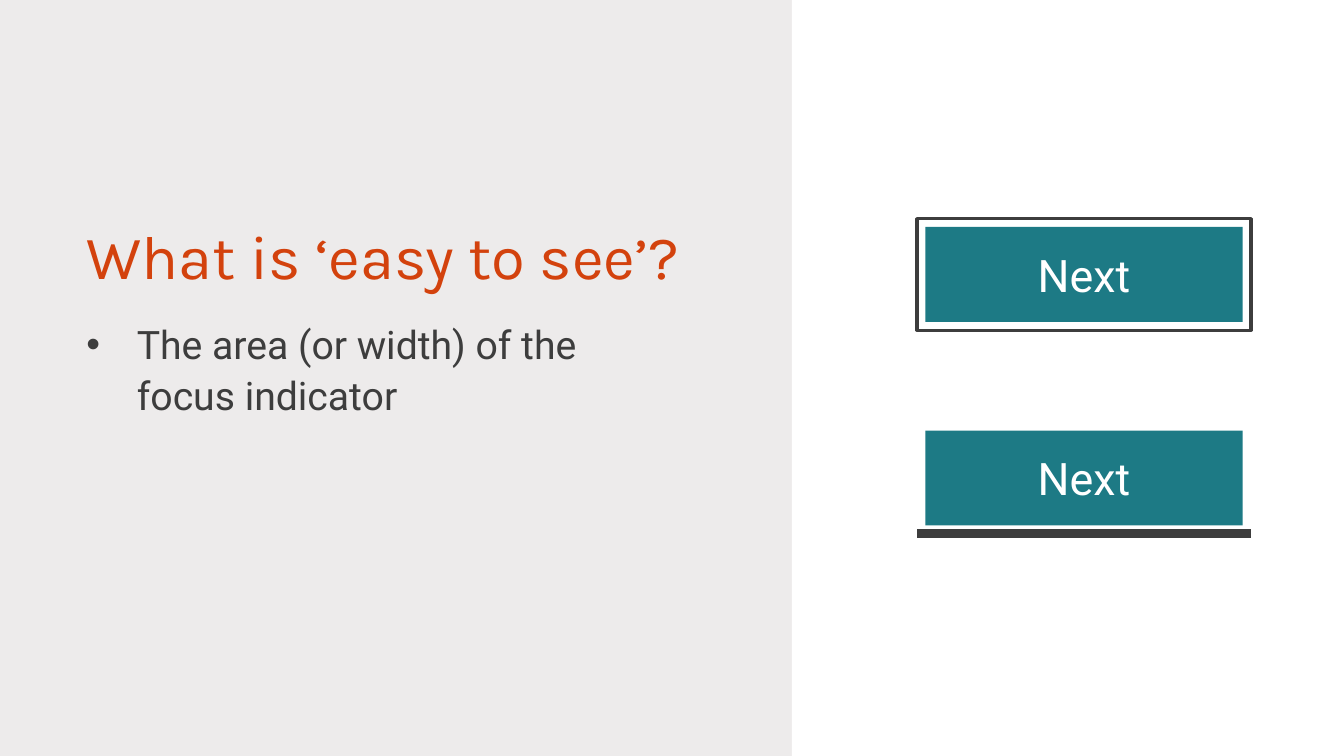
"""Build a slide comparing the area of two focus indicators."""
from lxml import etree
from pptx import Presentation
from pptx.dml.color import RGBColor
from pptx.enum.shapes import MSO_CONNECTOR, MSO_SHAPE
from pptx.enum.text import MSO_ANCHOR, PP_ALIGN
from pptx.oxml.ns import qn
from pptx.util import Cm, Pt

RECTANGLE = MSO_SHAPE.RECTANGLE
STRAIGHT = MSO_CONNECTOR.STRAIGHT
TOP, MIDDLE, BOTTOM = MSO_ANCHOR.TOP, MSO_ANCHOR.MIDDLE, MSO_ANCHOR.BOTTOM
LEFT, CENTER = PP_ALIGN.LEFT, PP_ALIGN.CENTER

GREY = RGBColor(0xED, 0xEB, 0xEB)
WHITE = RGBColor(0xFF, 0xFF, 0xFF)
ORANGE = RGBColor(0xD3, 0x42, 0x0D)
CHARCOAL = RGBColor(0x3D, 0x3D, 0x3D)
TEAL = RGBColor(0x1D, 0x7A, 0x85)

TITLE = "What is ‘easy to see’?"
BODY = "The area (or width) of the\nfocus indicator"
BUTTON_LABEL = "Next"

SLIDE_WIDTH, SLIDE_HEIGHT = 33.87, 19.05
PANEL_LEFT = 19.96
TEXT_LEFT, TEXT_WIDTH = 1.93, 19
BUTTON_LEFT, BUTTON_WIDTH, BUTTON_HEIGHT = 23.32, 8, 2.39
BUTTON_TOPS = (5.72, 10.85)
RING_GAP = 0.21
UNDERLINE_GAP = 0.2


def write_text(shape, text, *, size, font="Roboto", color=WHITE, align=LEFT,
               anchor=TOP, bullet=False, line_spacing=None):
    """Write one formatted paragraph into a shape."""
    frame = shape.text_frame
    frame.word_wrap = True
    frame.vertical_anchor = anchor
    paragraph = frame.paragraphs[0]
    paragraph.text = text
    paragraph.alignment = align
    if line_spacing:
        paragraph.line_spacing = line_spacing
    if bullet:
        properties = paragraph._p.get_or_add_pPr()
        properties.set("marL", str(Cm(1.27)))
        properties.set("indent", str(Cm(-1.27)))
        etree.SubElement(properties, qn("a:buFont"), typeface="Arial")
        etree.SubElement(properties, qn("a:buChar"), char="•")
    for run in paragraph.runs:
        run.font.size = Pt(size)
        run.font.name = font
        run.font.color.rgb = color


def add_rectangle(shapes, left, top, width, height, fill=None, line=None):
    """Add a rectangle with an optional fill and outline."""
    shape = shapes.add_shape(RECTANGLE, Cm(left), Cm(top), Cm(width), Cm(height))
    shape.shadow.inherit = False
    if fill is None:
        shape.fill.background()
    else:
        shape.fill.solid()
        shape.fill.fore_color.rgb = fill
    if line is None:
        shape.line.fill.background()
    else:
        shape.line.color.rgb = line
        shape.line.width = Pt(2.25)
    return shape


def add_button(slide, top):
    """Add a group holding one button and return its shapes."""
    shapes = slide.shapes.add_group_shape().shapes
    button = add_rectangle(shapes, BUTTON_LEFT, top, BUTTON_WIDTH, BUTTON_HEIGHT, TEAL)
    write_text(button, BUTTON_LABEL, size=32, align=CENTER, anchor=MIDDLE)
    return shapes


def main():
    """Build and save the slide."""
    presentation = Presentation()
    presentation.slide_width = Cm(SLIDE_WIDTH)
    presentation.slide_height = Cm(SLIDE_HEIGHT)
    slide = presentation.slides.add_slide(presentation.slide_layouts[6])
    slide.background.fill.solid()
    slide.background.fill.fore_color.rgb = GREY

    title = slide.shapes.add_textbox(Cm(TEXT_LEFT), Cm(3.53), Cm(TEXT_WIDTH), Cm(3.94))
    write_text(title, TITLE, size=44, font="Karla", color=ORANGE, anchor=BOTTOM)
    body = slide.shapes.add_textbox(Cm(TEXT_LEFT), Cm(7.82), Cm(TEXT_WIDTH), Cm(7.19))
    write_text(body, BODY, size=28, color=CHARCOAL, bullet=True, line_spacing=1.1)

    add_rectangle(slide.shapes, PANEL_LEFT, 0, SLIDE_WIDTH - PANEL_LEFT, SLIDE_HEIGHT, WHITE)

    ring_top, underline_top = BUTTON_TOPS
    indicator_left = BUTTON_LEFT - RING_GAP
    indicator_width = BUTTON_WIDTH + 2 * RING_GAP
    ringed = add_button(slide, ring_top)
    add_rectangle(ringed, indicator_left, ring_top - RING_GAP, indicator_width,
                  BUTTON_HEIGHT + 2 * RING_GAP, line=CHARCOAL)

    underlined = add_button(slide, underline_top)
    line_y = Cm(underline_top + BUTTON_HEIGHT + UNDERLINE_GAP)
    underline = underlined.add_connector(
        STRAIGHT, Cm(indicator_left), line_y, Cm(indicator_left + indicator_width), line_y)
    underline.line.color.rgb = CHARCOAL
    underline.line.width = Pt(6)
    etree.SubElement(underline._element.spPr, qn("a:effectLst"))

    presentation.save("out.pptx")


if __name__ == "__main__":
    main()
